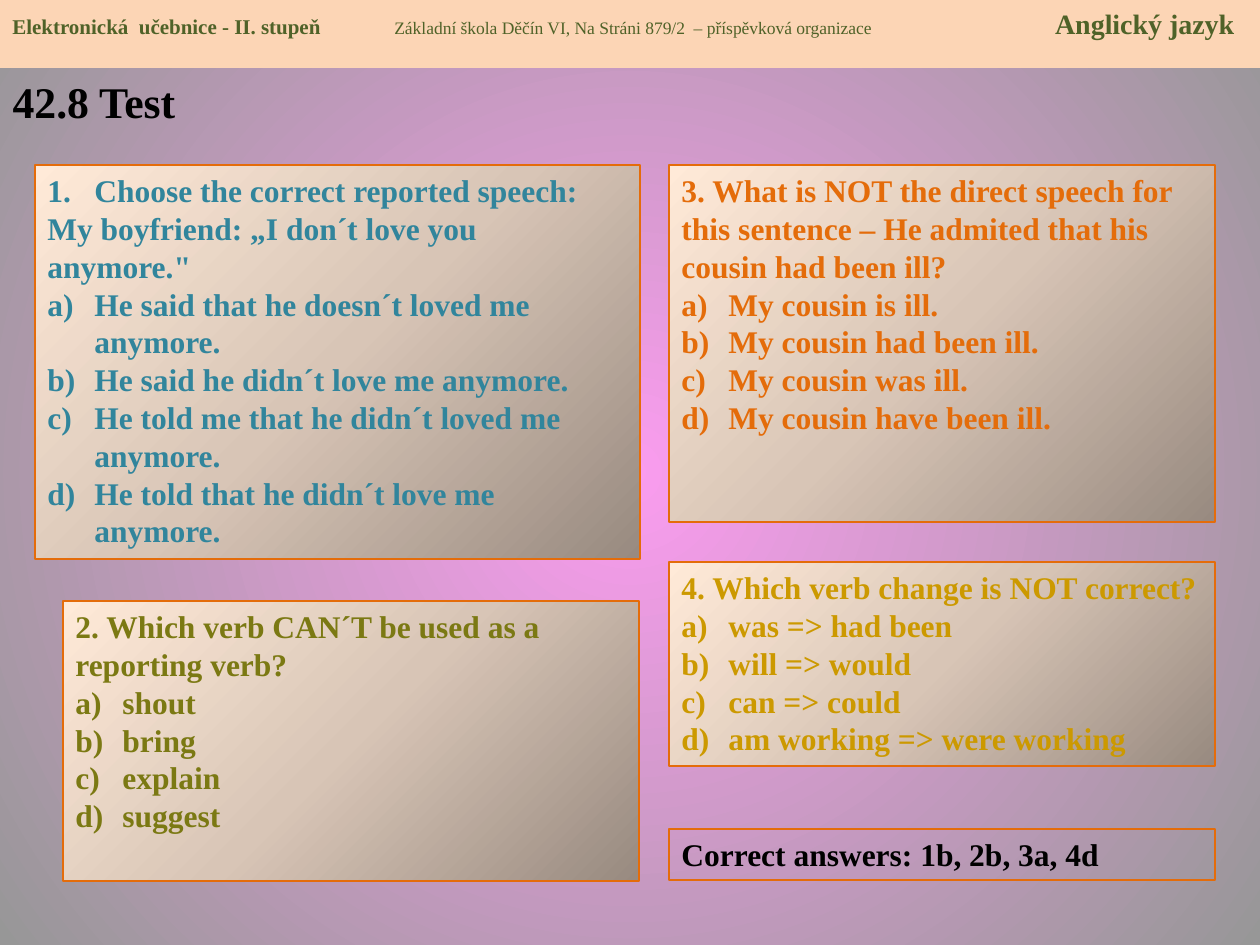
"""Build the English reported-speech test slide."""
from dataclasses import dataclass
from typing import Any

from lxml.etree import SubElement
from pptx import Presentation
from pptx.dml.color import RGBColor
from pptx.enum.shapes import MSO_SHAPE
from pptx.enum.text import MSO_ANCHOR, MSO_AUTO_SIZE, PP_ALIGN
from pptx.oxml.ns import qn
from pptx.util import Emu, Pt

PX_PER_INCH = 126
FONT = "Times New Roman"
BLACK = RGBColor(0x00, 0x00, 0x00)
PEACH = RGBColor(0xFC, 0xD5, 0xB5)
GREEN = RGBColor(0x4F, 0x62, 0x28)
TEAL = RGBColor(0x31, 0x85, 0x9C)
OLIVE = RGBColor(0x7B, 0x79, 0x13)
ORANGE = RGBColor(0xE4, 0x6C, 0x0A)
GOLD = RGBColor(0xCC, 0x99, 0x00)
PINK = RGBColor(0xFA, 0x9C, 0xEF)
GREY = RGBColor(0x97, 0x97, 0x97)
BROWN = RGBColor(0x98, 0x8A, 0x80)
SAND = RGBColor(0xD8, 0xC5, 0xB6)
CREAM = RGBColor(0xFF, 0xEA, 0xD8)

NUMBER = "arabicPeriod"
LETTER = "alphaLcParenR"


@dataclass(frozen=True)
class Card:
    """A framed question with lettered answers."""

    left: int
    top: int
    width: int
    height: int
    color: RGBColor
    question: str
    answers: tuple[str, ...] = ()
    heading: str = ""
    border: float = 0.75
    filled: bool = True


CARDS = (
    Card(35, 165, 605, 394, TEAL, "My boyfriend: „I don´t love you\vanymore.\"",
         ("He said that he doesn´t loved me anymore.",
          "He said he didn´t love me anymore.",
          "He told me that he didn´t loved me anymore.",
          "He told that he didn´t love me anymore."),
         heading="Choose the correct reported speech:", border=1),
    Card(63, 601, 576, 280, OLIVE, "2. Which verb CAN´T be used as a reporting verb?",
         ("shout", "bring", "explain", "suggest")),
    Card(669, 165, 546, 357, ORANGE,
         "3. What is NOT the direct speech for this sentence – "
         "He admited that his cousin had been ill?",
         ("My cousin is ill.", "My cousin had been ill.",
          "My cousin was ill.", "My cousin have been ill.")),
    Card(669, 562, 546, 204, GOLD, "4. Which verb change is NOT correct?",
         ("was => had been", "will => would", "can => could",
          "am working => were working")),
    Card(669, 829, 546, 51, BLACK, "Correct answers: 1b, 2b, 3a, 4d", filled=False),
)


def px(length: int) -> Emu:
    """Turn pixels into EMU."""
    return Emu(round(length * 914400 / PX_PER_INCH))


def fill_radially(owner: Any, colors: tuple[RGBColor, ...], focus: dict[str, int]) -> None:
    """Make the gradient inside the owner element radial around the focus."""
    gradient = next(owner.iter(qn("a:gradFill")))
    for child in list(gradient):
        gradient.remove(child)
    stops = SubElement(gradient, qn("a:gsLst"))
    for index, color in enumerate(colors):
        position = 100000 * index // (len(colors) - 1)
        stop = SubElement(stops, qn("a:gs"), pos=str(position))
        SubElement(stop, qn("a:srgbClr"), val=str(color))
    circle = SubElement(gradient, qn("a:path"), path="circle")
    SubElement(circle, qn("a:fillToRect"),
               {side: str(percent * 1000) for side, percent in focus.items()})


def write(paragraph: Any, text: str, *, size: int, color: RGBColor,
          bold: bool = True, numbering: str = "") -> None:
    """Append formatted text to a left-aligned paragraph."""
    paragraph.alignment = PP_ALIGN.LEFT
    if numbering:
        properties = paragraph._p.get_or_add_pPr()
        properties.set("marL", str(px(47)))
        properties.set("indent", str(-px(47)))
        SubElement(properties, qn("a:buFont"), typeface="+mj-lt")
        SubElement(properties, qn("a:buAutoNum"), type=numbering)
    for index, line in enumerate(text.split("\v")):
        if index:
            paragraph.add_line_break()
        run = paragraph.add_run()
        run.text = line
        run.font.name = FONT
        run.font.size = Pt(size)
        run.font.bold = bold
        run.font.color.rgb = color


def prepare_frame(shape: Any) -> Any:
    """Return the shape's wrapped, top-anchored text frame."""
    frame = shape.text_frame
    frame.word_wrap = True
    frame.auto_size = MSO_AUTO_SIZE.NONE
    frame.vertical_anchor = MSO_ANCHOR.TOP
    return frame


def add_box(slide: Any, left: int, top: int, width: int, height: int) -> Any:
    """Add a rectangle without shadow."""
    box = slide.shapes.add_shape(MSO_SHAPE.RECTANGLE, px(left), px(top), px(width), px(height))
    box.shadow.inherit = False
    return box


def add_title(slide: Any) -> None:
    """Place the slide title under the header band."""
    title = slide.shapes.title
    title.left, title.top, title.width, title.height = px(0), px(68), px(1260), px(877)
    frame = prepare_frame(title)
    write(frame.paragraphs[0], "42.8 Test", size=25, color=BLACK)


def add_header(slide: Any) -> None:
    """Draw the band with textbook, school and subject."""
    band = add_box(slide, 0, 0, 1260, 68)
    band.fill.solid()
    band.fill.fore_color.rgb = PEACH
    band.line.fill.background()
    paragraph = prepare_frame(band).paragraphs[0]
    tabs = SubElement(paragraph._p.get_or_add_pPr(), qn("a:tabLst"))
    for position, alignment in ((382, "l"), (1222, "r")):
        SubElement(tabs, qn("a:tab"), pos=str(px(position)), algn=alignment)
    write(paragraph, "Elektronická  učebnice - II. stupeň", size=12, color=GREEN)
    write(paragraph, "\tZákladní škola Děčín VI, Na Stráni 879/2  – příspěvková organizace",
          size=10, color=GREEN, bold=False)
    write(paragraph, "\tAnglický jazyk", size=16, color=GREEN)


def add_card(slide: Any, card: Card) -> None:
    """Draw one question card."""
    box = add_box(slide, card.left, card.top, card.width, card.height)
    box.line.color.rgb = ORANGE
    box.line.width = Pt(card.border)
    if card.filled:
        box.fill.gradient()
        fill_radially(box._element.spPr, (BROWN, SAND, CREAM), {"l": 100, "t": 100})
    else:
        box.fill.background()
    lines = [(card.heading, NUMBER)] if card.heading else []
    lines.append((card.question, ""))
    lines += [(answer, LETTER) for answer in card.answers]
    frame = prepare_frame(box)
    for index, (text, numbering) in enumerate(lines):
        paragraph = frame.add_paragraph() if index else frame.paragraphs[0]
        write(paragraph, text, size=18, color=card.color, numbering=numbering)


def main() -> None:
    """Build and save the presentation."""
    presentation = Presentation()
    presentation.slide_width, presentation.slide_height = px(1260), px(945)
    slide = presentation.slides.add_slide(presentation.slide_layouts[5])
    slide.background.fill.gradient()
    fill_radially(slide._element, (PINK, GREY), dict.fromkeys("ltrb", 50))
    add_title(slide)
    add_header(slide)
    for card in CARDS:
        add_card(slide, card)
    presentation.save("out.pptx")


if __name__ == "__main__":
    main()
